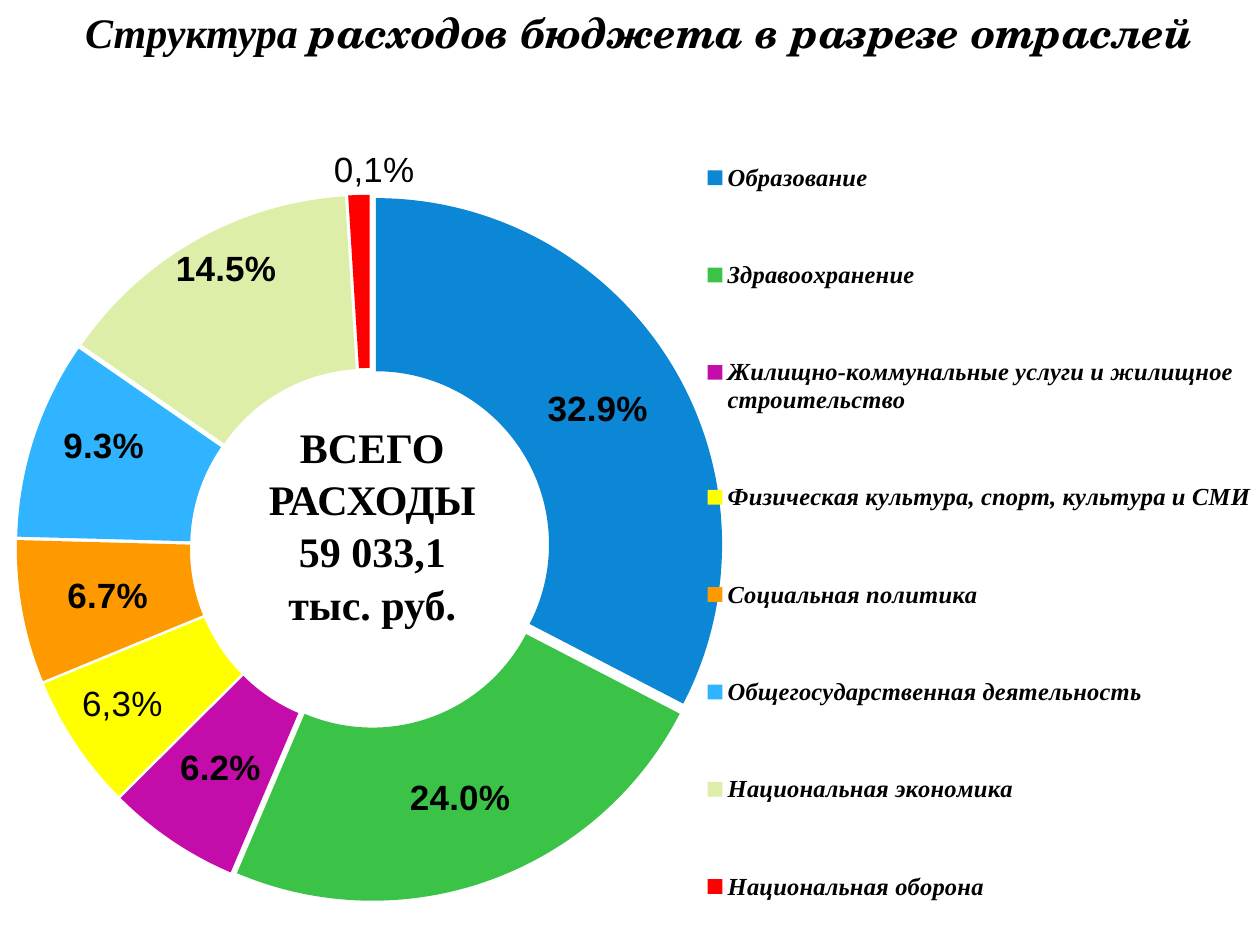
import dataclasses

import pptx
import pptx.chart.data
import pptx.dml.color
import pptx.enum.chart
import pptx.enum.text
import pptx.oxml
import pptx.oxml.ns
import pptx.util

WIDTH, HEIGHT = pptx.util.Inches(10), pptx.util.Inches(7.5)


@dataclasses.dataclass(frozen=True)
class Theme:
    text: str = "000000"
    serif: str = "Times New Roman"
    script: str = "TeX Gyre Schola"
    sans: str = "Arial"
    heading: int = 24
    label: int = 20
    legend: int = 14


THEME = Theme()

SECTORS = [
    ("Образование", 0.329, "0B87D6"),
    ("Здравоохранение", 0.24, "3BC348"),
    ("Жилищно-коммунальные услуги и жилищное строительство", 0.062, "C40CAA"),
    ("Физическая культура, спорт, культура и СМИ", 0.063, "FFFF00"),
    ("Социальная политика", 0.067, "FF9900"),
    ("Общегосударственная деятельность", 0.093, "31B4FF"),
    ("Национальная экономика", 0.145, "DCEEA7"),
    ("Национальная оборона", 0.01, "FF0000"),
]
# Sector index: (own text or None, shift as shares of the chart)
MOVED_LABELS = {
    3: ("6,3%", -0.02, 0.01),
    5: (None, -0.01, -0.02),
    6: (None, -0.01, -0.05),
    7: ("0,1%", 0.01, -0.12),
}


def share_box(left, top, width, height):
    """Turn shares of the slide into lengths."""
    return (round(left * WIDTH), round(top * HEIGHT),
            round(width * WIDTH), round(height * HEIGHT))


def style_font(font, name, size, bold=True, italic=False):
    font.name, font.size = name, pptx.util.Pt(size)
    font.bold, font.italic = bold, italic
    font.color.rgb = pptx.dml.color.RGBColor.from_string(THEME.text)


def set_layout(parent, position, **values):
    """Put a manual chart layout at the given child position."""
    for old in parent.findall(pptx.oxml.ns.qn("c:layout")):
        parent.remove(old)
    parts = "".join(f'<c:{k} val="{v}"/>' for k, v in values.items())
    parent.insert(position, pptx.oxml.parse_xml(
        f'<c:layout {pptx.oxml.ns.nsdecls("c")}>'
        f"<c:manualLayout>{parts}</c:manualLayout></c:layout>"))


def add_text_frame(slide, box):
    tf = slide.shapes.add_textbox(*box).text_frame
    tf.word_wrap = True
    return tf


def add_title(slide, box):
    p = add_text_frame(slide, box).paragraphs[0]
    p.alignment = pptx.enum.text.PP_ALIGN.CENTER
    for text, name in (("Структура", THEME.serif),
                       (" расходов бюджета в разрезе отраслей", THEME.script)):
        r = p.add_run()
        r.text = text
        style_font(r.font, name, THEME.heading, italic=True)


def add_total(slide, box):
    tf = add_text_frame(slide, box)
    tf.text = "ВСЕГО РАСХОДЫ\n59 033,1\nтыс. руб."
    for p in tf.paragraphs:
        p.alignment = pptx.enum.text.PP_ALIGN.CENTER
        p.line_spacing = 1.04
        style_font(p.font, THEME.serif, THEME.heading)


def style_labels(plot, series):
    labels = series.data_labels
    labels.show_value = True
    labels.show_percentage = False
    labels.number_format, labels.number_format_is_linked = "0.0%", False
    style_font(labels.font, THEME.sans, THEME.label)
    for index, (text, dx, dy) in MOVED_LABELS.items():
        label = series.points[index].data_label
        if text:
            p = label.text_frame.paragraphs[0]
            r = p.add_run()
            r.text = text
            style_font(r.font, THEME.sans, THEME.label, bold=False)
        else:
            style_font(label.font, THEME.sans, THEME.label)
        dlbl = labels._element.xpath(f"c:dLbl[c:idx/@val='{index}']")[0]
        set_layout(dlbl, 1, x=dx, y=dy)


def add_doughnut(slide, box):
    data = pptx.chart.data.CategoryChartData(number_format="0.0%")
    data.categories = [name for name, _, _ in SECTORS]
    data.add_series("Series 1", [value for _, value, _ in SECTORS])
    chart = slide.shapes.add_chart(
        pptx.enum.chart.XL_CHART_TYPE.DOUGHNUT_EXPLODED, *box, data).chart
    chart.has_title = False
    style_font(chart.font, "Calibri", 18, bold=False)
    plot = chart.plots[0]
    plot.vary_by_categories = True
    series = plot.series[0]

    ser = series._element
    for old in ser.findall(pptx.oxml.ns.qn("c:explosion")):
        ser.remove(old)
    ser.find(pptx.oxml.ns.qn("c:tx")).addnext(pptx.oxml.parse_xml(
        f'<c:explosion {pptx.oxml.ns.nsdecls("c")} val="4"/>'))
    for index, (_, _, color) in enumerate(SECTORS):
        fill = series.points[index].format.fill
        fill.solid()
        fill.fore_color.rgb = pptx.dml.color.RGBColor.from_string(color)
    style_labels(plot, series)

    chart.has_legend = True
    legend = chart.legend
    legend.position = pptx.enum.chart.XL_LEGEND_POSITION.BOTTOM
    legend.include_in_layout = False
    style_font(legend.font, THEME.serif, THEME.legend, italic=True)
    set_layout(legend._element, 1, xMode="edge", yMode="edge",
               x=0.56, y=0.01, w=0.44, h=0.95)
    set_layout(plot._element.getparent(), 0, layoutTarget="inner",
               xMode="edge", yMode="edge", x=0.025, y=0.089, w=0.554, h=0.826)


def main():
    prs = pptx.Presentation()
    prs.slide_width, prs.slide_height = WIDTH, HEIGHT
    slide = prs.slides.add_slide(prs.slide_layouts[6])
    add_doughnut(slide, share_box(-0.012, 0.09, 1.012, 0.976))
    add_title(slide, share_box(0.035, 0, 0.945, 0.067))
    add_total(slide, share_box(0.154, 0.437, 0.283, 0.23))
    prs.save("out.pptx")


if __name__ == "__main__":
    main()
